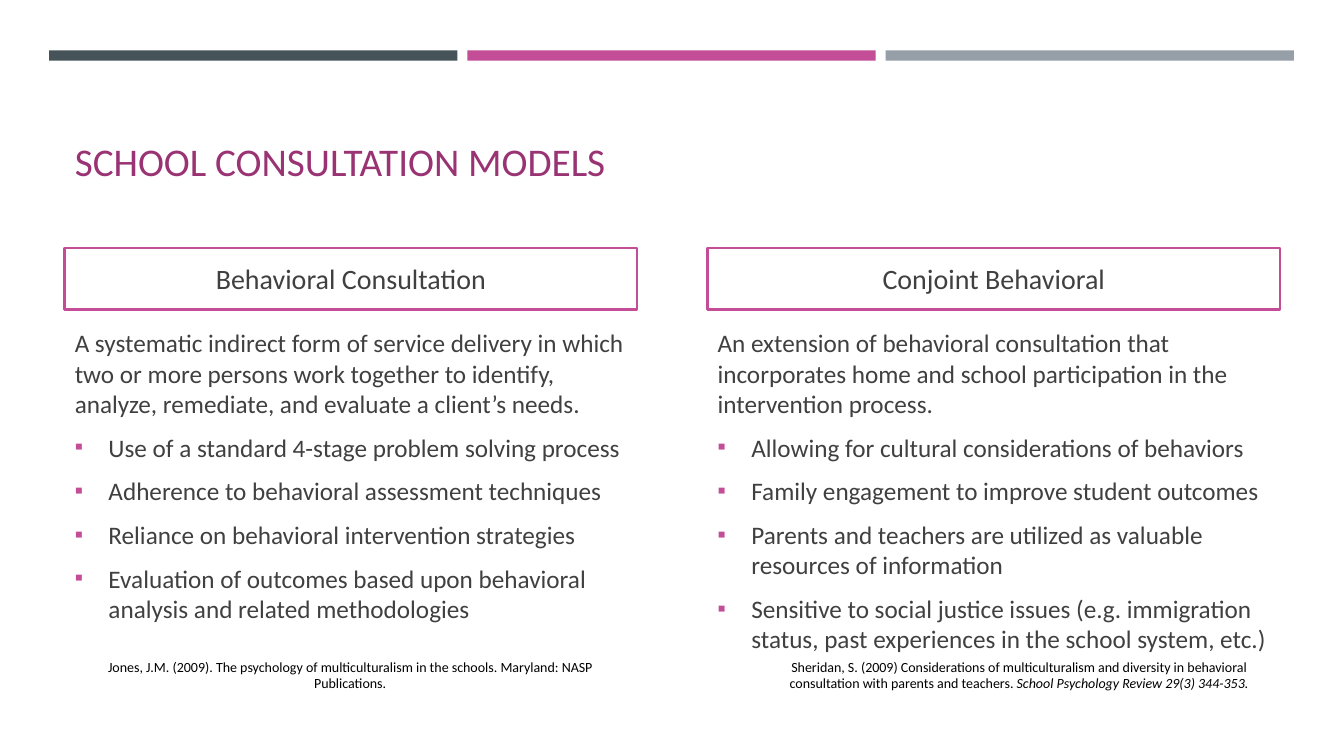
from dataclasses import dataclass

from lxml import etree
from pptx import Presentation
from pptx import util as u
from pptx.dml.color import RGBColor
from pptx.enum import shapes, text
from pptx.oxml import ns


@dataclass(frozen=True)
class Theme:
    font: str = "Calibri"
    slate: str = "465359"
    pink: str = "C34D97"
    grey: str = "969FA7"
    plum: str = "993373"
    ink: str = "404040"
    black: str = "000000"
    white: str = "FFFFFF"
    title_size: int = 28
    heading_size: int = 20
    body_size: int = 18
    citation_size: int = 10


THEME = Theme()

MODELS = [
    {
        "left": 1.63,
        "heading": "Behavioral Consultation",
        "lead": "A systematic indirect form of service delivery in which two or more "
                "persons work together to identify, analyze, remediate, and evaluate "
                "a client’s needs.",
        "points": [
            "Use of a standard 4-stage problem solving process",
            "Adherence to behavioral assessment techniques",
            "Reliance on behavioral intervention strategies",
            "Evaluation of outcomes based upon behavioral analysis and related "
            "methodologies",
        ],
        "citation": [("Jones, J.M. (2009). The psychology of multiculturalism in the "
                      "schools. Maryland: NASP Publications.", False)],
        "citation_span": (2.26, 13.13),
        "citation_indent": 0,
    },
    {
        "left": 17.83,
        "heading": "Conjoint Behavioral",
        "lead": "An extension of behavioral consultation that incorporates home and "
                "school participation in the intervention process.",
        "points": [
            "Allowing for cultural considerations of behaviors",
            "Family engagement to improve student outcomes",
            "Parents and teachers are utilized as valuable resources of information",
            "Sensitive to social justice issues (e.g. immigration status, past "
            "experiences in the school system, etc.)",
        ],
        "citation": [("Sheridan, S. (2009) Considerations of multiculturalism and "
                      "diversity in behavioral consultation with parents and "
                      "teachers. ", False),
                     ("School Psychology Review 29(3) 344-353.", True)],
        "citation_span": (17.63, 14.83),
        "citation_indent": 1.27,
    },
]


def apply(target, formats):
    for name, value in formats.items():
        setattr(target, name, value)


class SlideBuilder:
    def __init__(self, slide, theme):
        self.slide = slide
        self.theme = theme

    def place(self, index, left, top, width, height, anchor):
        holder = self.slide.placeholders[index]
        apply(holder, {"left": u.Cm(left), "top": u.Cm(top),
                       "width": u.Cm(width), "height": u.Cm(height)})
        apply(holder.text_frame, {"word_wrap": True, "vertical_anchor": anchor,
                                  "auto_size": text.MSO_AUTO_SIZE.NONE})
        return holder

    def add_text(self, paragraph, runs, size, color, **formats):
        apply(paragraph, formats)
        for words, italic in runs:
            run = paragraph.add_run()
            run.text = words
            apply(run.font, {"name": self.theme.font, "size": u.Pt(size),
                             "bold": False, "italic": italic})
            run.font.color.rgb = RGBColor.from_string(color)

    def indent(self, paragraph, margin, first=0):
        props = paragraph._p.get_or_add_pPr()
        props.set("marL", str(u.Cm(margin)))
        props.set("indent", str(u.Cm(first)))
        return props

    def bullet(self, paragraph):
        props = self.indent(paragraph, 0.85, -0.85)
        color = etree.SubElement(props, ns.qn("a:buClr"))
        etree.SubElement(color, ns.qn("a:srgbClr"), val=self.theme.pink)
        etree.SubElement(props, ns.qn("a:buSzPct"), val="92000")
        etree.SubElement(props, ns.qn("a:buFont"), typeface=self.theme.font)
        etree.SubElement(props, ns.qn("a:buChar"), char="▪")

    def bar(self, left, color):
        band = self.slide.shapes.add_shape(
            shapes.MSO_SHAPE.RECTANGLE, u.Cm(left), u.Cm(1.27), u.Cm(10.29), u.Cm(0.26))
        band.shadow.inherit = False
        band.fill.solid()
        band.fill.fore_color.rgb = RGBColor.from_string(color)
        band.line.fill.background()

    def title(self, words):
        holder = self.place(0, 1.63, 2.03, 30.63, 2.74, text.MSO_ANCHOR.BOTTOM)
        self.add_text(holder.text_frame.paragraphs[0], [(words, False)],
                      self.theme.title_size, self.theme.plum,
                      alignment=text.PP_ALIGN.LEFT, space_before=u.Pt(0))

    def heading(self, index, left, words):
        holder = self.place(index, left, 6.25, 14.43, 1.55, text.MSO_ANCHOR.MIDDLE)
        holder.fill.solid()
        holder.fill.fore_color.rgb = RGBColor.from_string(self.theme.white)
        holder.line.color.rgb = RGBColor.from_string(self.theme.pink)
        holder.line.width = u.Pt(1.75)
        self.add_text(holder.text_frame.paragraphs[0], [(words, False)],
                      self.theme.heading_size, self.theme.ink,
                      alignment=text.PP_ALIGN.CENTER, space_before=u.Pt(0))

    def body(self, index, left, lead, points):
        frame = self.place(index, left, 8.13, 14.43, 8.15,
                           text.MSO_ANCHOR.TOP).text_frame
        opening = frame.paragraphs[0]
        etree.SubElement(self.indent(opening, 0), ns.qn("a:buNone"))
        self.add_text(opening, [(lead, False)], self.theme.body_size, self.theme.ink,
                      space_before=u.Pt(0), space_after=u.Pt(6))
        for point in points:
            item = frame.add_paragraph()
            self.bullet(item)
            self.add_text(item, [(point, False)], self.theme.body_size, self.theme.ink,
                          space_before=u.Pt(3.6), space_after=u.Pt(6))

    def citation(self, left, width, runs, indent):
        box = self.slide.shapes.add_textbox(u.Cm(left), u.Cm(16.46), u.Cm(width), u.Cm(1.12))
        box.text_frame.word_wrap = True
        source = box.text_frame.paragraphs[0]
        self.indent(source, indent)
        self.add_text(source, runs, self.theme.citation_size, self.theme.black,
                      alignment=text.PP_ALIGN.CENTER)


def main():
    deck = Presentation()
    apply(deck, {"slide_width": u.Cm(33.87), "slide_height": u.Cm(19.05)})
    comparison = deck.slide_layouts.get_by_name("Comparison")
    builder = SlideBuilder(deck.slides.add_slide(comparison), THEME)

    # Colour bars across the top
    for column, color in enumerate((THEME.slate, THEME.pink, THEME.grey)):
        builder.bar(1.24 + column * 10.54, color)

    # Title
    builder.title("SCHOOL CONSULTATION MODELS")

    # One column per model, in placeholder pairs 1-2 and 3-4
    for column, model in enumerate(MODELS):
        builder.heading(1 + 2 * column, model["left"], model["heading"])
        builder.body(2 + 2 * column, model["left"], model["lead"], model["points"])
        builder.citation(*model["citation_span"], model["citation"],
                         model["citation_indent"])

    deck.save("out.pptx")


if __name__ == "__main__":
    main()
